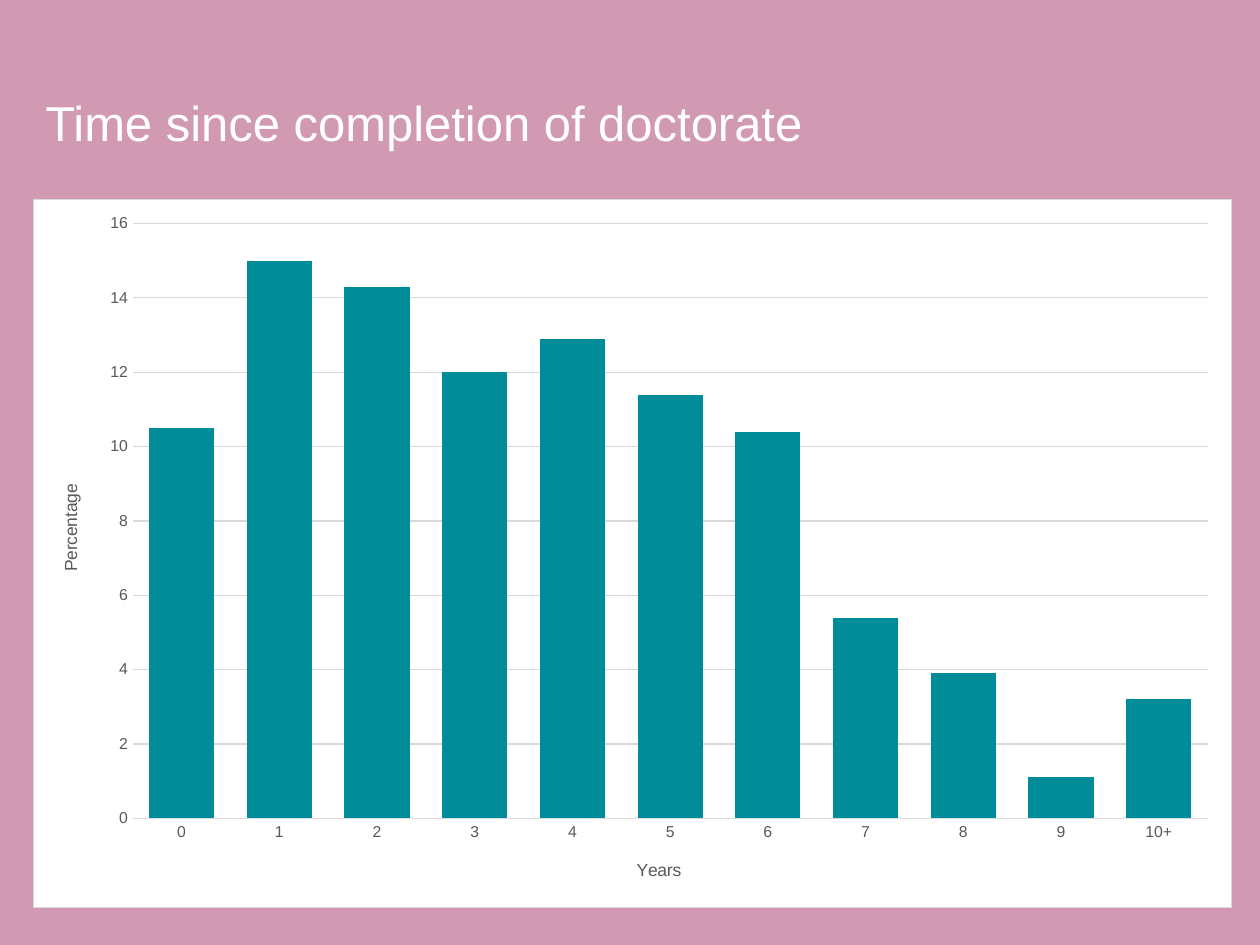
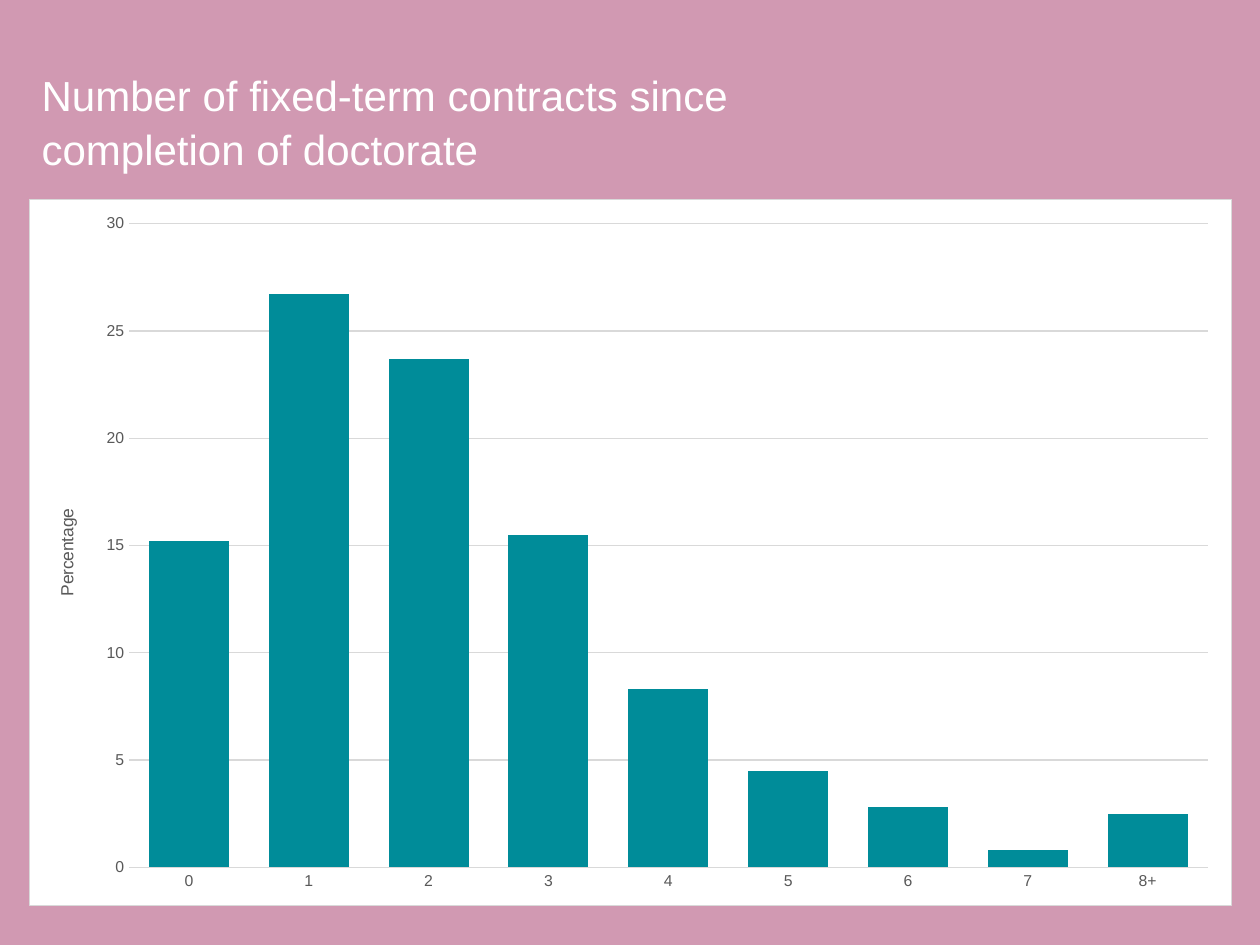
import lxml.etree
import pptx
import pptx.chart.data
import pptx.dml.color
import pptx.enum.chart
import pptx.enum.text
import pptx.oxml
import pptx.oxml.ns
import pptx.util

Inches = pptx.util.Inches
Pt = pptx.util.Pt

FONT = "Arial"
COLORS = {
    "background": "D199B2",
    "title": "FFFFFF",
    "panel": "FFFFFF",
    "bar": "008C99",
    "grid": "D9D9D9",
    "axis_text": "595959",
}
TITLE_ONLY_LAYOUT = 5
LINE_WIDTH = 0.75

# Space between the chart panel and its plot, in inches
PLOT_LEFT, PLOT_TOP, PLOT_RIGHT = 0.79, 0.19, 0.19

CHART_PAGES = [
    {
        "title": "Time since completion of doctorate",
        "title_box": (0.26, 0.61, 6.61, 0.69),
        "title_size": 28,
        "chart_box": (0.26, 1.58, 9.52, 5.63),
        "categories": ["0", "1", "2", "3", "4", "5", "6", "7", "8", "9", "10+"],
        "percentages": [10.5, 15, 14.3, 12, 12.9, 11.4, 10.4, 5.4, 3.9, 1.1, 3.2],
        "scale": (16, 2),
        "category_title": "Years",
        "plot_bottom": 0.71,
    },
    {
        "title": "Number of fixed-term contracts since completion of doctorate",
        "title_box": (0.23, 0.49, 6.45, 0.93),
        "title_size": 24,
        "chart_box": (0.23, 1.58, 9.55, 5.61),
        "categories": ["0", "1", "2", "3", "4", "5", "6", "7", "8+"],
        "percentages": [15.2, 26.7, 23.7, 15.5, 8.3, 4.5, 2.8, 0.8, 2.5],
        "scale": (30, 5),
        "category_title": None,
        "plot_bottom": 0.3,
    },
]


def rgb(name):
    return pptx.dml.color.RGBColor.from_string(COLORS[name])


def format_font(font, size, color):
    font.name = FONT
    font.size = Pt(size)
    font.bold = False
    font.color.rgb = rgb(color)


def write_text(frame, text, size, color, line_spacing=None):
    para = frame.paragraphs[0]
    para.alignment = pptx.enum.text.PP_ALIGN.LEFT
    para.line_spacing = line_spacing
    span = para.add_run()
    span.text = text
    format_font(span.font, size, color)


def draw_line(line, color):
    line.color.rgb = rgb(color)
    line.width = Pt(LINE_WIDTH)


def add_title(page, box, text, size):
    title = page.shapes.title
    title.left, title.top, title.width, title.height = map(Inches, box)
    frame = title.text_frame
    frame.word_wrap = True
    frame.auto_size = pptx.enum.text.MSO_AUTO_SIZE.NONE
    frame.vertical_anchor = pptx.enum.text.MSO_ANCHOR.MIDDLE
    write_text(frame, text, size, "title", line_spacing=1.06)


def style_axis(axis, title):
    axis.major_tick_mark = pptx.enum.chart.XL_TICK_MARK.NONE
    axis.minor_tick_mark = pptx.enum.chart.XL_TICK_MARK.NONE
    format_font(axis.tick_labels.font, 9, "axis_text")
    axis.has_title = title is not None
    if title:
        write_text(axis.axis_title.text_frame, title, 10, "axis_text")


def paint_panel(chart):
    """Give the whole chart area its fill and thin border."""
    properties = pptx.oxml.parse_xml(
        f'<c:spPr {pptx.oxml.ns.nsdecls("c", "a")}>'
        f'<a:solidFill><a:srgbClr val="{COLORS["panel"]}"/></a:solidFill>'
        f'<a:ln w="{Pt(LINE_WIDTH)}"><a:solidFill>'
        f'<a:srgbClr val="{COLORS["grid"]}"/></a:solidFill></a:ln></c:spPr>'
    )
    chart.element.find(pptx.oxml.ns.qn("c:chart")).addnext(properties)


def place_plot(chart, width, height, bottom):
    """Fix the plot inside the panel, leaving the shared margins around it."""
    qn = pptx.oxml.ns.qn
    plot_area = chart.element.find(".//" + qn("c:plotArea"))
    for old_layout in plot_area.findall(qn("c:layout")):
        plot_area.remove(old_layout)
    layout = lxml.etree.Element(qn("c:layout"))
    manual = lxml.etree.SubElement(layout, qn("c:manualLayout"))
    settings = {
        "layoutTarget": "inner",
        "xMode": "edge",
        "yMode": "edge",
        "x": PLOT_LEFT / width,
        "y": PLOT_TOP / height,
        "w": (width - PLOT_LEFT - PLOT_RIGHT) / width,
        "h": (height - PLOT_TOP - bottom) / height,
    }
    for name, value in settings.items():
        lxml.etree.SubElement(manual, qn("c:" + name), val=str(value))
    plot_area.insert(0, layout)


def add_percentage_chart(page, box, categories, percentages, scale,
                         category_title, plot_bottom):
    data = pptx.chart.data.CategoryChartData(number_format="0.0")
    data.categories = categories
    data.add_series("Series 1", percentages)
    chart = page.shapes.add_chart(
        pptx.enum.chart.XL_CHART_TYPE.COLUMN_CLUSTERED, *map(Inches, box), data
    ).chart
    chart.has_title = False
    chart.has_legend = False
    format_font(chart.font, 10, "axis_text")

    plot = chart.plots[0]
    plot.gap_width = 50
    plot.overlap = -27
    plot.vary_by_categories = False
    bars = plot.series[0].format
    bars.fill.solid()
    bars.fill.fore_color.rgb = rgb("bar")

    style_axis(chart.category_axis, category_title)
    draw_line(chart.category_axis.format.line, "grid")

    value_axis = chart.value_axis
    style_axis(value_axis, "Percentage")
    value_axis.minimum_scale = 0
    value_axis.maximum_scale, value_axis.major_unit = scale
    value_axis.tick_labels.number_format = "0"
    value_axis.tick_labels.number_format_is_linked = False
    value_axis.format.line.fill.background()
    draw_line(value_axis.major_gridlines.format.line, "grid")

    paint_panel(chart)
    place_plot(chart, box[2], box[3], plot_bottom)


def add_chart_page(deck, content):
    page = deck.slides.add_slide(deck.slide_layouts[TITLE_ONLY_LAYOUT])
    add_title(page, content["title_box"], content["title"], content["title_size"])
    add_percentage_chart(
        page,
        content["chart_box"],
        content["categories"],
        content["percentages"],
        content["scale"],
        content["category_title"],
        content["plot_bottom"],
    )


def main():
    deck = pptx.Presentation()
    deck.slide_width = Inches(10)
    deck.slide_height = Inches(7.5)
    background = deck.slide_master.background.fill
    background.solid()
    background.fore_color.rgb = rgb("background")
    for content in CHART_PAGES:
        add_chart_page(deck, content)
    deck.save("out.pptx")


if __name__ == "__main__":
    main()
